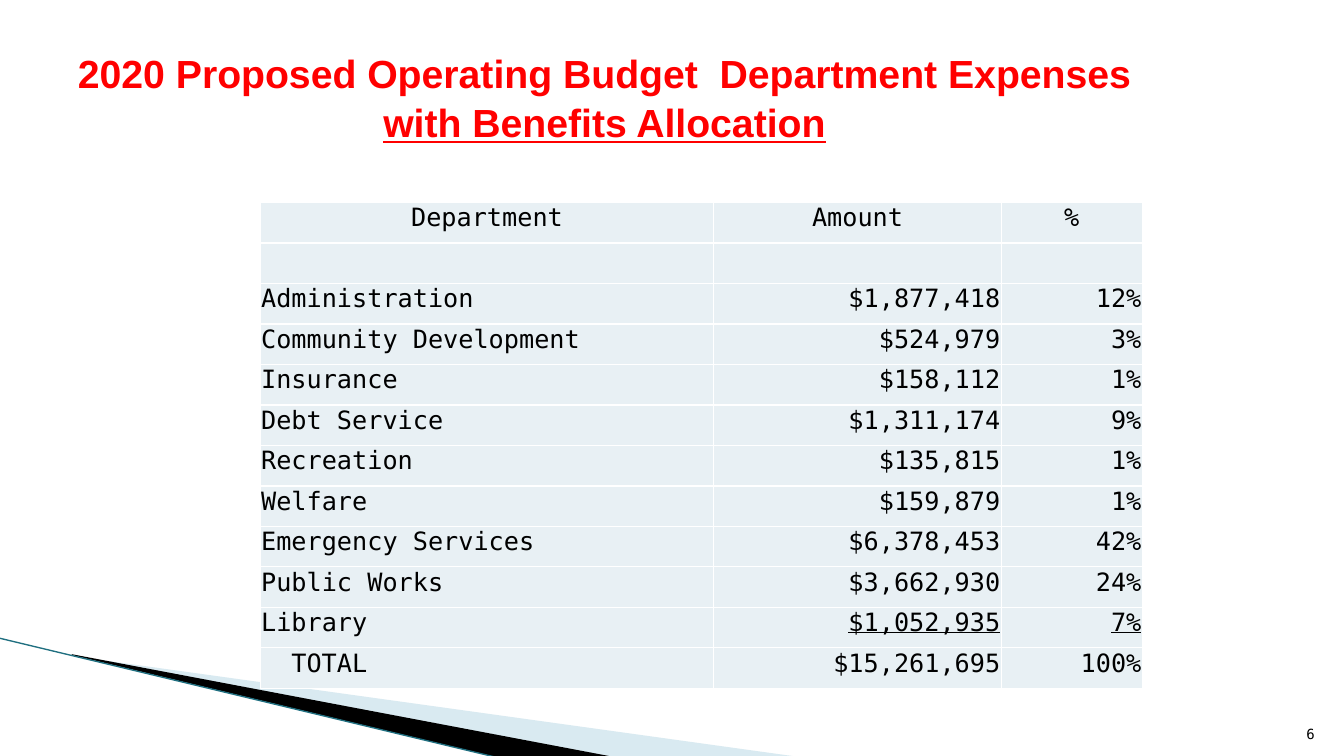
from lxml.etree import SubElement
from pptx import Presentation
from pptx.dml.color import RGBColor
from pptx.enum.shapes import MSO_CONNECTOR
from pptx.enum.text import MSO_ANCHOR, PP_ALIGN
from pptx.oxml.ns import qn
from pptx.util import Inches, Pt

RED = RGBColor(0xFF, 0x00, 0x00)
BLACK = RGBColor(0x00, 0x00, 0x00)
PALE_BLUE = RGBColor(0xA0, 0xCB, 0xDC)
TEAL = RGBColor(0x1F, 0x6F, 0x80)
CELL_BLUE = RGBColor(0xE8, 0xF0, 0xF4)

HEADINGS = ("Department", "Amount", "%")
EXPENSES = [
    ("Administration", "$1,877,418", "12%"),
    ("Community Development", "$524,979", "3%"),
    ("Insurance", "$158,112", "1%"),
    ("Debt Service", "$1,311,174", "9%"),
    ("Recreation", "$135,815", "1%"),
    ("Welfare", "$159,879", "1%"),
    ("Emergency Services", "$6,378,453", "42%"),
    ("Public Works", "$3,662,930", "24%"),
    ("Library", "$1,052,935", "7%"),
]
TOTAL = ("TOTAL", "$15,261,695", "100%")
COLUMN_WIDTHS = (4.5, 2.85, 1.4)


class BudgetSlide:
    heading_font = "Arial"
    body_font = "DejaVu Sans Mono"

    def __init__(self, slide):
        self.slide = slide
        self.shapes = slide.shapes

    def run(self, paragraph, text, font, size, color, bold=False, underline=False):
        run = paragraph.add_run()
        run.text = text
        run.font.name = font
        run.font.size = Pt(size)
        run.font.color.rgb = color
        run.font.bold = bold
        run.font.underline = underline

    def text_box(self, left, top, width, height, align, anchor):
        frame = self.shapes.add_textbox(
            Inches(left), Inches(top), Inches(width), Inches(height)).text_frame
        frame.word_wrap = True
        frame.vertical_anchor = anchor
        paragraph = frame.paragraphs[0]
        paragraph.alignment = align
        return paragraph

    def wedge(self, points, color, opacity=100):
        start, *rest = [(Inches(x), Inches(y)) for x, y in points]
        builder = self.shapes.build_freeform(*start)
        builder.add_line_segments(rest, close=True)
        wedge = builder.convert_to_shape()
        wedge.shadow.inherit = False
        wedge.fill.solid()
        wedge.fill.fore_color.rgb = color
        wedge.line.fill.background()
        if opacity < 100:
            tint = wedge.fill._xPr.find(".//" + qn("a:srgbClr"))
            SubElement(tint, qn("a:alpha"), val=str(opacity * 1000))

    def rule(self, x1, y1, x2, y2, color, width):
        rule = self.shapes.add_connector(
            MSO_CONNECTOR.STRAIGHT, Inches(x1), Inches(y1), Inches(x2), Inches(y2))
        rule.line.color.rgb = color
        rule.line.width = Pt(width)
        SubElement(rule._element.spPr, qn("a:effectLst"))

    def borders(self, cell):
        properties = cell._tc.get_or_add_tcPr()
        for position, side in enumerate(("lnL", "lnR", "lnT", "lnB")):
            border = properties.makeelement(qn("a:" + side), {"w": str(Pt(1))})
            fill = SubElement(border, qn("a:solidFill"))
            SubElement(fill, qn("a:srgbClr"), val="FFFFFF")
            properties.insert(position, border)

    def cell(self, cell, text, align, underline=False, indent=0.01):
        cell.margin_left = Inches(indent)
        cell.margin_right = cell.margin_top = Inches(0.01)
        cell.margin_bottom = 0
        cell.fill.solid()
        cell.fill.fore_color.rgb = CELL_BLUE
        self.borders(cell)
        if text:
            paragraph = cell.text_frame.paragraphs[0]
            paragraph.alignment = align
            self.run(paragraph, text, self.body_font, 18, BLACK, underline=underline)

    def expense_table(self, left, top, height):
        rows = [HEADINGS, ("", "", ""), *EXPENSES, TOTAL]
        table = self.shapes.add_table(
            len(rows), len(HEADINGS), Inches(left), Inches(top),
            Inches(sum(COLUMN_WIDTHS)), Inches(height)).table
        table.first_row = table.horz_banding = False
        for column, width in zip(table.columns, COLUMN_WIDTHS):
            column.width = Inches(width)
        for r, values in enumerate(rows):
            table.rows[r].height = Inches(height / len(rows))
            for c, value in enumerate(values):
                if values is HEADINGS:
                    align = PP_ALIGN.CENTER
                else:
                    align = PP_ALIGN.RIGHT if c else PP_ALIGN.LEFT
                last_expense = values is EXPENSES[-1]
                indent = 0.31 if values is TOTAL and c == 0 else 0.01
                self.cell(table.cell(r, c), value, align, last_expense and c > 0, indent)

    def title(self):
        title = self.text_box(0.58, 0.33, 10.83, 1.25, PP_ALIGN.CENTER, MSO_ANCHOR.MIDDLE)
        title.line_spacing = 1.04
        self.run(title, "2020 Proposed Operating Budget  Department Expenses ",
                 self.heading_font, 28, RED, bold=True)
        self.run(title, "with Benefits Allocation",
                 self.heading_font, 28, RED, bold=True, underline=True)

    def page_number(self, number):
        page = self.text_box(12.61, 7.01, 0.53, 0.4, PP_ALIGN.RIGHT, MSO_ANCHOR.BOTTOM)
        self.run(page, number, self.body_font, 10, BLACK)


def main():
    presentation = Presentation()
    presentation.slide_width = Inches(13.33)
    presentation.slide_height = Inches(7.5)
    budget = BudgetSlide(presentation.slides.add_slide(presentation.slide_layouts[6]))
    budget.wedge([(0.73, 6.51), (7.93, 7.51), (6.08, 7.51), (0.73, 6.5)], PALE_BLUE, 40)
    budget.wedge([(0.71, 6.49), (6.09, 7.51), (4.96, 7.52), (0.72, 6.5)], BLACK)
    budget.rule(-0.01, 6.33, 4.95, 7.52, TEAL, 0.95)
    budget.title()
    budget.expense_table(2.58, 2.01, 4.82)
    budget.page_number("6")
    presentation.save("out.pptx")


if __name__ == "__main__":
    main()
